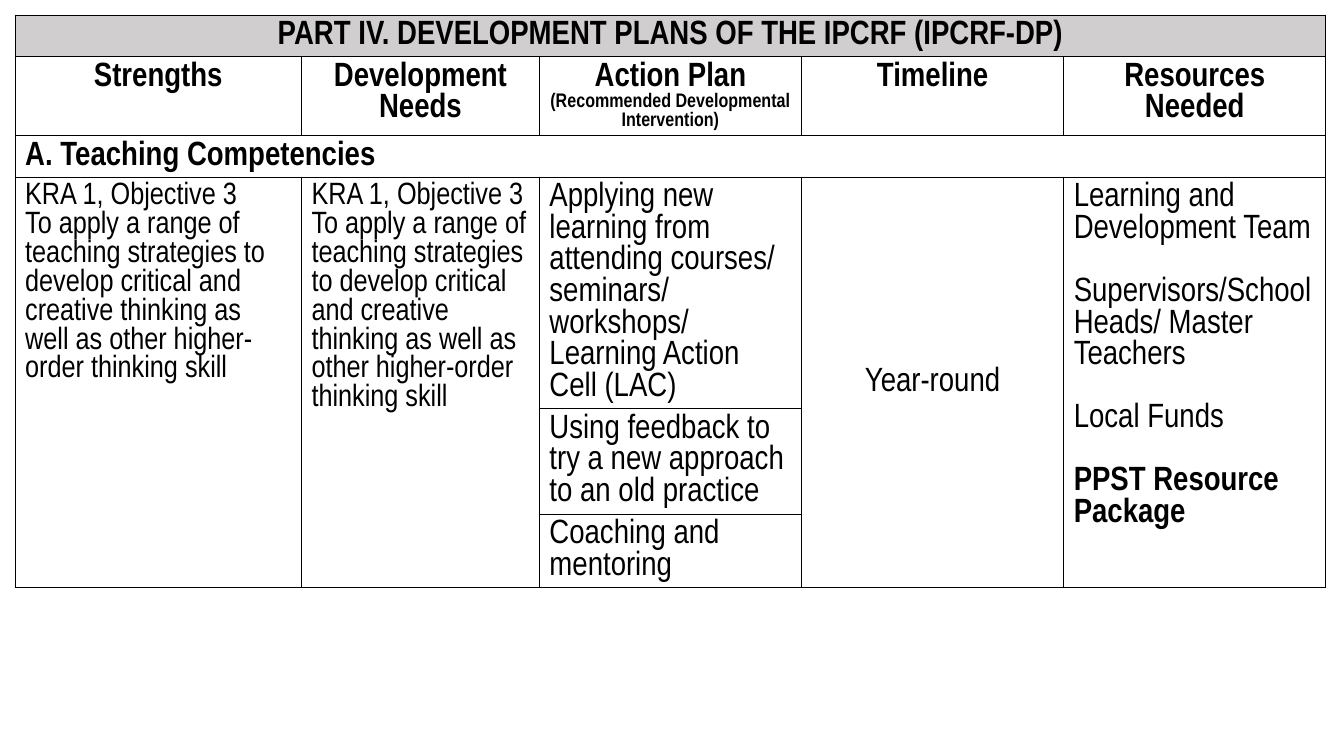
"""Build the IPCRF development plan table slide."""
from dataclasses import dataclass

from lxml.etree import SubElement
from pptx import Presentation
from pptx.dml.color import RGBColor
from pptx.enum.text import MSO_ANCHOR as Anchor, PP_ALIGN as Align
from pptx.oxml.ns import qn
from pptx.util import Emu, Pt

EMU_PER_PX = 9144


@dataclass(frozen=True)
class Theme:
    """Hold the colours, font and type sizes of the slide."""
    font: str = "Arial Narrow"
    ink: str = "000000"
    banner: str = "D0CECE"
    large: int = 24
    medium: int = 22
    small: int = 14
    gap: float = 22.5
    border: int = 1


THEME = Theme()
COLUMN_WIDTHS = (284, 236, 260, 260, 260)
ROW_HEIGHTS = (41, 78, 41, 229, 105, 73)
HEADINGS = ("Strengths", "Development Needs", "Action Plan ", "Timeline", "Resources Needed")
OBJECTIVE = (
    "KRA 1, Objective 3",
    "To apply a range of teaching strategies to develop critical and creative "
    "thinking as well as other higher-order thinking skill",
)
ACTIONS = (
    "Applying new learning from attending courses/ seminars/ workshops/ "
    "Learning Action Cell (LAC)",
    "Using feedback to try a new approach to an old practice",
    "Coaching and mentoring",
)
RESOURCES = (
    "Learning and Development Team",
    "Supervisors/School Heads/ Master Teachers",
    "Local Funds",
)


def px(length):
    """Turn whole pixels into EMU."""
    return Emu(length * EMU_PER_PX)


def add_text(cell, text, *, size=THEME.large, bold=False, align=Align.LEFT,
             before=0, same_line=False):
    """Add text to a cell, in a new paragraph unless same_line is set."""
    frame = cell.text_frame
    paragraph = frame.paragraphs[-1]
    if paragraph.runs and not same_line:
        paragraph = frame.add_paragraph()
        paragraph.space_before = Pt(before)
    paragraph.alignment = align
    run = paragraph.add_run()
    run.text = text
    run.font.name = THEME.font
    run.font.size = Pt(size)
    run.font.bold = bold
    run.font.color.rgb = RGBColor.from_string(THEME.ink)


def set_borders(cell):
    """Draw a solid line on all four sides of a cell."""
    properties = cell._tc.get_or_add_tcPr()
    for side in ("lnL", "lnR", "lnT", "lnB"):
        line = SubElement(properties, qn(f"a:{side}"), w=str(Pt(THEME.border)))
        fill = SubElement(line, qn("a:solidFill"))
        SubElement(fill, qn("a:srgbClr"), val=THEME.ink)


def add_grid(slide):
    """Add the empty bordered table and return it."""
    shape = slide.shapes.add_table(
        len(ROW_HEIGHTS), len(COLUMN_WIDTHS), px(15), px(15),
        px(sum(COLUMN_WIDTHS)), px(sum(ROW_HEIGHTS)))
    table = shape.table
    table.first_row = table.horz_banding = False
    for column, width in zip(table.columns, COLUMN_WIDTHS):
        column.width = px(width)
    for row, height in zip(table.rows, ROW_HEIGHTS):
        row.height = px(height)
    for cell in table.iter_cells():
        set_borders(cell)
        cell.fill.background()
    return table


def merge_cells(table):
    """Merge the full-width rows and the tall body cells."""
    for row in (0, 2):
        table.cell(row, 0).merge(table.cell(row, 4))
    for column in (0, 1, 3, 4):
        table.cell(3, column).merge(table.cell(5, column))


def fill_headings(table):
    """Write the banner, the column headings and the section title."""
    banner = table.cell(0, 0)
    banner.fill.solid()
    banner.fill.fore_color.rgb = RGBColor.from_string(THEME.banner)
    add_text(banner, "PART IV. DEVELOPMENT PLANS OF THE IPCRF (IPCRF-DP)",
             bold=True, align=Align.CENTER)
    for column, heading in enumerate(HEADINGS):
        add_text(table.cell(1, column), heading, bold=True, align=Align.CENTER)
    add_text(table.cell(1, 2), "(Recommended Developmental Intervention)",
             size=THEME.small, bold=True, align=Align.CENTER, same_line=True)
    add_text(table.cell(2, 0), "A. Teaching Competencies", bold=True)


def fill_body(table):
    """Write the objectives, actions, timeline and resources."""
    for column in (0, 1):
        for text in OBJECTIVE:
            add_text(table.cell(3, column), text, size=THEME.medium)
    for row, action in enumerate(ACTIONS, start=3):
        add_text(table.cell(row, 2), action)
    timeline = table.cell(3, 3)
    timeline.vertical_anchor = Anchor.MIDDLE
    add_text(timeline, "Year-round", align=Align.CENTER)
    resources = table.cell(3, 4)
    for text in RESOURCES:
        add_text(resources, text, before=THEME.gap)
    add_text(resources, "PPST Resource Package", bold=True, before=THEME.gap)


def main():
    """Build and save the presentation."""
    presentation = Presentation()
    presentation.slide_width = px(1333)
    presentation.slide_height = px(750)
    slide = presentation.slides.add_slide(presentation.slide_layouts[6])
    table = add_grid(slide)
    merge_cells(table)
    fill_headings(table)
    fill_body(table)
    presentation.save("out.pptx")


if __name__ == "__main__":
    main()
